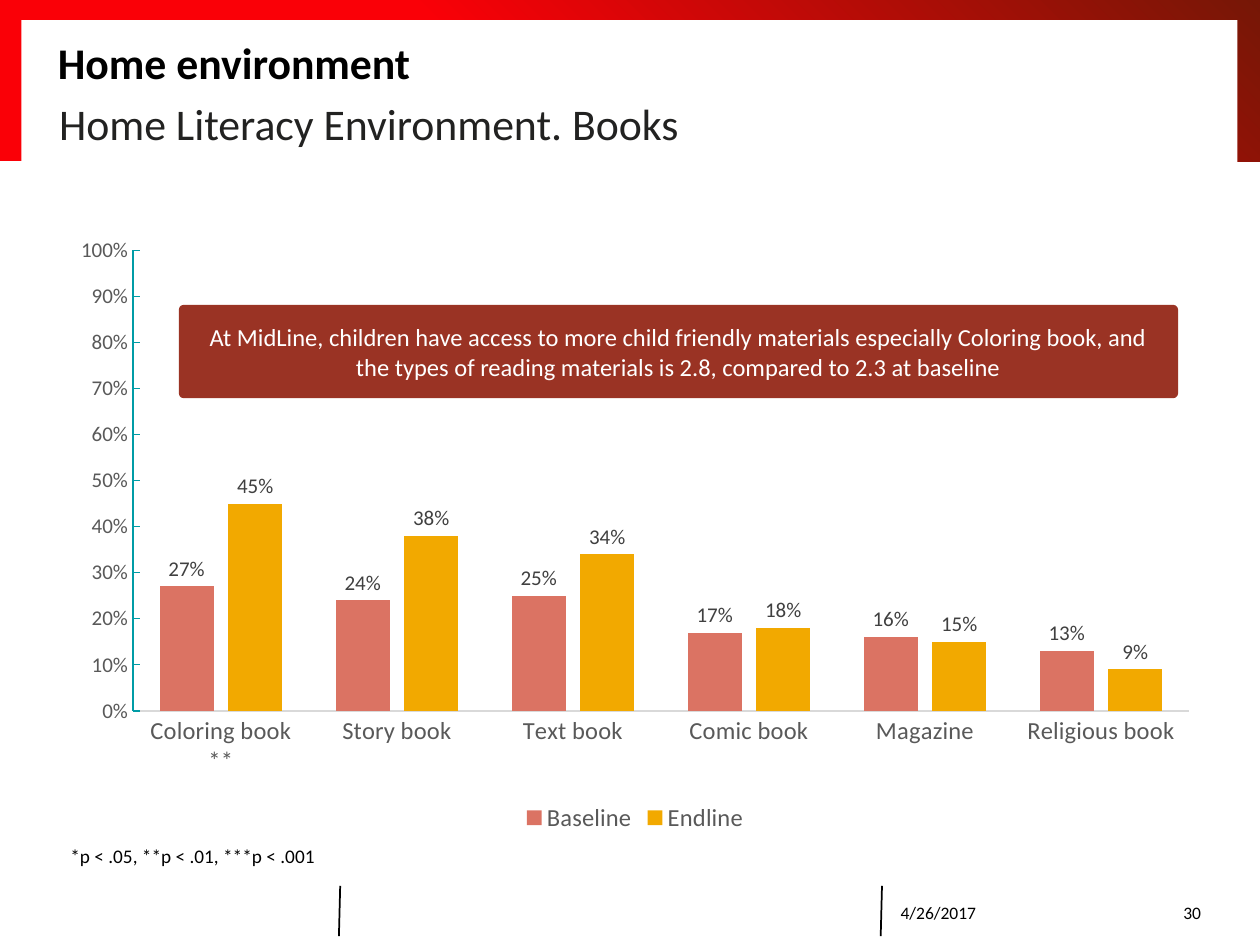
from lxml.etree import SubElement
from pptx import Presentation
from pptx.chart.data import CategoryChartData
from pptx.dml.color import RGBColor
from pptx.enum.chart import XL_CHART_TYPE, XL_LABEL_POSITION, XL_LEGEND_POSITION, XL_TICK_MARK
from pptx.enum.shapes import MSO_CONNECTOR, MSO_SHAPE
from pptx.enum.text import MSO_ANCHOR, PP_ALIGN
from pptx.oxml.ns import qn
from pptx.util import Inches, Pt

FONT = "Calibri"
CATEGORIES = ["Coloring book **", "Story book", "Text book",
              "Comic book", "Magazine", "Religious book"]
SERIES = [
    ("Baseline", "DB7363", [0.27, 0.24, 0.25, 0.17, 0.16, 0.13]),
    ("Endline", "F2A900", [0.45, 0.38, 0.34, 0.18, 0.15, 0.09]),
]


def rgb(color):
    """Turn a hex string into a colour."""
    return RGBColor.from_string(color)


def set_font(font, size, color, bold=False):
    """Format a font."""
    font.name, font.size, font.bold = FONT, Pt(size), bold
    font.color.rgb = rgb(color)


def write(sp, text, size, color="000000", align=PP_ALIGN.LEFT,
          anchor=MSO_ANCHOR.MIDDLE, inset=None, bold=False, wrap=True):
    """Put one formatted paragraph in a shape."""
    tf = sp.text_frame
    tf.word_wrap = wrap
    tf.vertical_anchor = anchor
    if inset is not None:
        tf.margin_left = tf.margin_right = tf.margin_top = tf.margin_bottom = Inches(inset)
    p = tf.paragraphs[0]
    p.text = text
    p.alignment = align
    set_font(p.font, size, color, bold)


def add_text(s, box, text, size, **style):
    """Add a text box."""
    write(s.shapes.add_textbox(*map(Inches, box)), text, size, **style)


def add_box(s, box, color, kind=MSO_SHAPE.RECTANGLE):
    """Add a filled shape without outline."""
    sp = s.shapes.add_shape(kind, *map(Inches, box))
    sp.shadow.inherit = False
    sp.fill.solid()
    sp.fill.fore_color.rgb = rgb(color)
    sp.line.fill.background()
    return sp


def add_frame(s):
    """Draw the gradient frame around the heading."""
    fill = add_box(s, (0, 0, 10, 1.28), "FA0007").fill
    fill.gradient()
    fill.gradient_angle = 45
    stops = ((0.4, "FA0007"), (1, "761706"))
    for stop, (position, color) in zip(fill.gradient_stops, stops):
        stop.position = position
        stop.color.rgb = rgb(color)
    add_box(s, (0.17, 0.16, 9.65, 1.18), "FFFFFF")


def add_divider(s, x):
    """Draw a slightly tilted footer divider."""
    line = s.shapes.add_connector(MSO_CONNECTOR.STRAIGHT, Inches(x), Inches(7.03),
                                  Inches(x - 0.01), Inches(7.43))
    line.line.color.rgb = rgb("000000")
    line.line.width = Pt(1)
    SubElement(line._element.spPr, qn("a:effectLst"))


def add_title(s, text):
    """Place the title in front of the frame."""
    title = s.shapes.title
    title.left, title.top, title.width, title.height = map(Inches, (0.46, 0.22, 9.06, 0.55))
    write(title, text, 25, inset=0, bold=True)
    s.shapes._spTree.append(title._element)


def format_axis(axis, size, color, tick):
    """Format the labels, line and ticks of an axis."""
    axis.has_major_gridlines = False
    axis.major_tick_mark = tick
    axis.minor_tick_mark = XL_TICK_MARK.NONE
    axis.format.line.color.rgb = rgb(color)
    axis.format.line.width = Pt(0.75)
    set_font(axis.tick_labels.font, size, "595959")


def add_books_chart(s):
    """Add the column chart of books at home."""
    data = CategoryChartData(number_format="0%")
    data.categories = CATEGORIES
    for name, _, values in SERIES:
        data.add_series(name, values)
    chart = s.shapes.add_chart(XL_CHART_TYPE.COLUMN_CLUSTERED,
                               *map(Inches, (0.46, 1.79, 9.16, 4.86)), data).chart
    set_font(chart.font, 10, "000000")
    chart.has_title = False
    chart.has_legend = True
    chart.legend.position = XL_LEGEND_POSITION.BOTTOM
    chart.legend.include_in_layout = False
    set_font(chart.legend.font, 14, "595959")

    format_axis(chart.category_axis, 14, "D9D9D9", XL_TICK_MARK.NONE)
    axis = chart.value_axis
    format_axis(axis, 12, "009CA6", XL_TICK_MARK.INSIDE)
    axis.minimum_scale, axis.maximum_scale, axis.major_unit = 0, 1, 0.1
    axis.tick_labels.number_format = "0%"
    axis.tick_labels.number_format_is_linked = False

    plot = chart.plots[0]
    plot.vary_by_categories = False
    plot.gap_width, plot.overlap = 99, -27
    for series, (_, color, _) in zip(plot.series, SERIES):
        series.format.fill.solid()
        series.format.fill.fore_color.rgb = rgb(color)
        labels = series.data_labels
        labels.show_value = True
        labels.position = XL_LABEL_POSITION.OUTSIDE_END
        labels.number_format = "0%"
        labels.number_format_is_linked = False
        set_font(labels.font, 12, "404040")


def add_callout(s, text):
    """Add the rounded message over the chart."""
    sp = add_box(s, (1.42, 2.42, 7.93, 0.74), "9A3324", MSO_SHAPE.ROUNDED_RECTANGLE)
    sp.adjustments[0] = 0.05
    write(sp, text, 14, "FFFFFF", PP_ALIGN.CENTER)


def main():
    """Build the slide."""
    prs = Presentation()
    prs.slide_width, prs.slide_height = Inches(10), Inches(7.5)
    s = prs.slides.add_slide(prs.slide_layouts[5])
    add_frame(s)
    for x in (2.7, 7):
        add_divider(s, x)
    add_title(s, "Home environment")
    add_text(s, (0.47, 0.77, 9.06, 0.4), "Home Literacy Environment. Books", 25,
             color="222221", anchor=MSO_ANCHOR.TOP, inset=0)
    add_books_chart(s)
    add_callout(s, "At MidLine, children have access to more child friendly materials "
                   "especially Coloring book, and the types of reading materials is 2.8, "
                   "compared to 2.3 at baseline")
    add_text(s, (0.46, 6.65, 2.18, 0.29), "*p < .05, **p < .01, ***p < .001", 11,
             anchor=MSO_ANCHOR.TOP, wrap=False)
    add_text(s, (7.05, 7.04, 1.73, 0.4), "4/26/2017", 10)
    add_text(s, (8.78, 7.04, 0.85, 0.4), "30", 10, align=PP_ALIGN.RIGHT)
    prs.save("out.pptx")


if __name__ == "__main__":
    main()
